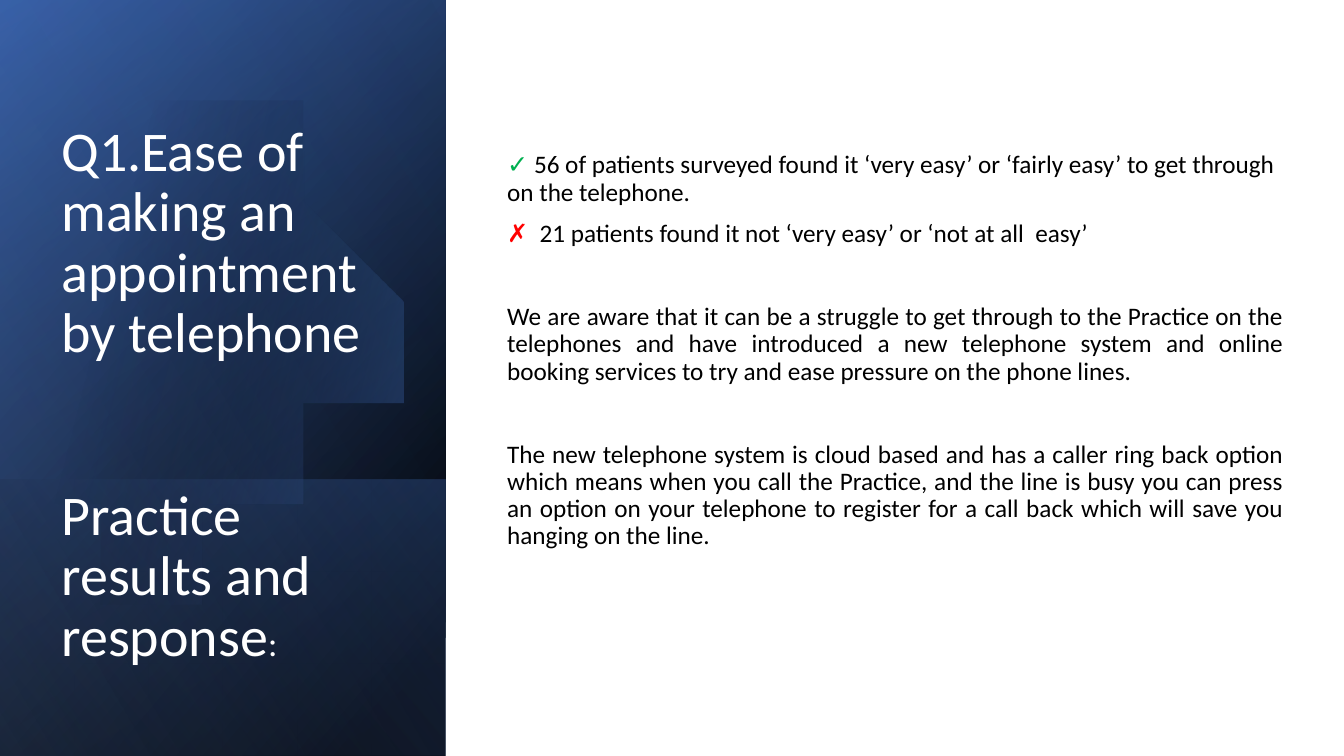
from lxml.etree import SubElement
from pptx import Presentation
from pptx.dml.color import RGBColor
from pptx.enum.shapes import MSO_SHAPE as Shape
from pptx.enum.text import MSO_ANCHOR as Anchor, MSO_AUTO_SIZE as AutoSize, PP_ALIGN as Align
from pptx.oxml.ns import qn
from pptx.util import Inches, Pt

PANEL = (-1.54, 1.54, 7.5, 4.42)
PANEL_FOOT = (0.84, 3.92, 2.74, 4.42)
DISC_START = (1.49, 1.1)
DISC_CURVES = [
    [(2.46, 1.12), (3.35, 1.77), (3.63, 2.75)],
    [(3.98, 3.97), (3.28, 5.23), (2.07, 5.58)],
    [(1.31, 5.8), (0.53, 5.61), (0, 5.14)],
    [(0, 5.14), (0, 1.61), (0, 1.61)],
    [(0.23, 1.42), (0.5, 1.28), (0.8, 1.19)],
    [(1.03, 1.13), (1.26, 1.1), (1.49, 1.1)],
]
GREEN, RED, BLACK, WHITE = "00B050", "FF0000", "000000", "FFFFFF"


def color(hex_code):
    return RGBColor.from_string(hex_code)


def set_gradient(shape, stops, angle):
    """Fill with (position %, colour, opacity %) stops, and drop line and shadow."""
    shape.shadow.inherit = False
    shape.line.fill.background()
    shape.fill.background()
    properties = shape._element.spPr
    no_fill = properties.find(qn("a:noFill"))
    gradient = SubElement(properties, qn("a:gradFill"), rotWithShape="1")
    properties.replace(no_fill, gradient)
    stop_list = SubElement(gradient, qn("a:gsLst"))
    for position, hex_code, opacity in stops:
        stop = SubElement(stop_list, qn("a:gs"), pos=str(position * 1000))
        tint = SubElement(stop, qn("a:srgbClr"), val=hex_code)
        SubElement(tint, qn("a:alpha"), val=str(opacity * 1000))
    SubElement(gradient, qn("a:lin"), ang=str(angle * 60000), scaled="0")


def add_panel(slide, box, stops, angle):
    panel = slide.shapes.add_shape(Shape.RECTANGLE, *map(Inches, box))
    panel.rotation = 90
    panel._element.spPr.find(qn("a:xfrm")).set("flipH", "1")
    set_gradient(panel, stops, angle)


def curve_points(start, curves, steps=16):
    """Sample a chain of cubic Bézier curves."""
    points = []
    for first, second, end in curves:
        for step in range(1, steps + 1):
            t = step / steps
            weights = ((1 - t) ** 3, 3 * t * (1 - t) ** 2, 3 * t * t * (1 - t), t ** 3)
            corners = (start, first, second, end)
            points.append(tuple(sum(w * c[axis] for w, c in zip(weights, corners))
                                for axis in (0, 1)))
        start = end
    return points


def add_disc(slide, stops, angle):
    builder = slide.shapes.build_freeform(*DISC_START, scale=Inches(1))
    builder.add_line_segments(curve_points(DISC_START, DISC_CURVES), close=True)
    set_gradient(builder.convert_to_shape(), stops, angle)


def place(placeholder, box, anchor, bottom_inset):
    """Position a placeholder and bring it in front of the panels."""
    placeholder.left, placeholder.top, placeholder.width, placeholder.height = map(Inches, box)
    frame = placeholder.text_frame
    frame.word_wrap = True
    frame.auto_size = AutoSize.NONE
    frame.vertical_anchor = anchor
    frame.margin_bottom = Inches(bottom_inset)
    placeholder._element.getparent().append(placeholder._element)
    return frame


def write(paragraph, *runs, size, align=Align.LEFT, before=0):
    """Write (text, colour[, size]) runs as an unbulleted paragraph."""
    paragraph.alignment = align
    paragraph.line_spacing = 0.9
    paragraph.space_before = Pt(before)
    properties = paragraph._p.get_or_add_pPr()
    properties.set("marL", "0")
    properties.set("indent", "0")
    SubElement(properties, qn("a:buNone"))
    for text, hex_code, *own_size in runs:
        run = paragraph.add_run()
        run.text = text
        run.font.name = "Calibri"
        run.font.size = Pt(own_size[0] if own_size else size)
        run.font.color.rgb = color(hex_code)


def main():
    deck = Presentation()
    deck.slide_width, deck.slide_height = Inches(13.33), Inches(7.5)
    slide = deck.slides.add_slide(deck.slide_layouts[1])

    add_panel(slide, PANEL, [(8, BLACK, 100), (100, "2F5597", 100)], 50)
    add_panel(slide, PANEL, [(0, BLACK, 0), (99, "4472C4", 46)], 30)
    add_panel(slide, PANEL_FOOT, [(2, "4472C4", 29), (100, BLACK, 30)], 130)
    add_disc(slide, [(29, BLACK, 0), (100, "4472C4", 43)], 14)
    add_panel(slide, PANEL, [(0, BLACK, 0), (99, "8FAADC", 11)], 120)

    title = place(slide.shapes.title, (0.51, 0.64, 3.5, 6.43), Anchor.BOTTOM, 0.44)
    write(title.paragraphs[0], ("Q1.Ease of making an appointment by telephone", WHITE), size=40)
    write(title.add_paragraph(), ("Practice results and response", WHITE), (":", WHITE, 25),
          size=40, before=87)

    body = place(slide.placeholders[1], (4.93, 0.31, 7.9, 6.76), Anchor.MIDDLE, 0.46)
    write(body.paragraphs[0], ("✓ ", GREEN),
          ("56 of patients surveyed found it ‘very easy’ or ‘fairly easy’ to get through "
           "on the telephone.", BLACK), size=18, before=10)
    write(body.add_paragraph(), ("✗", RED),
          ("  21 patients found it not ‘very easy’ or ‘not at all  easy’", BLACK),
          size=18, before=10)
    responses = [
        "We are aware that it can be a struggle to get through to the Practice on the "
        "telephones and have introduced a new telephone system and online booking services "
        "to try and ease pressure on the phone lines.",
        "The new telephone system is cloud based and has a caller ring back option which "
        "means when you call the Practice, and the line is busy you can press an option on "
        "your telephone to register for a call back which will save you hanging on the line.",
    ]
    for response in responses:
        write(body.add_paragraph(), (response, BLACK), size=18, align=Align.JUSTIFY, before=40)

    deck.save("out.pptx")


if __name__ == "__main__":
    main()
